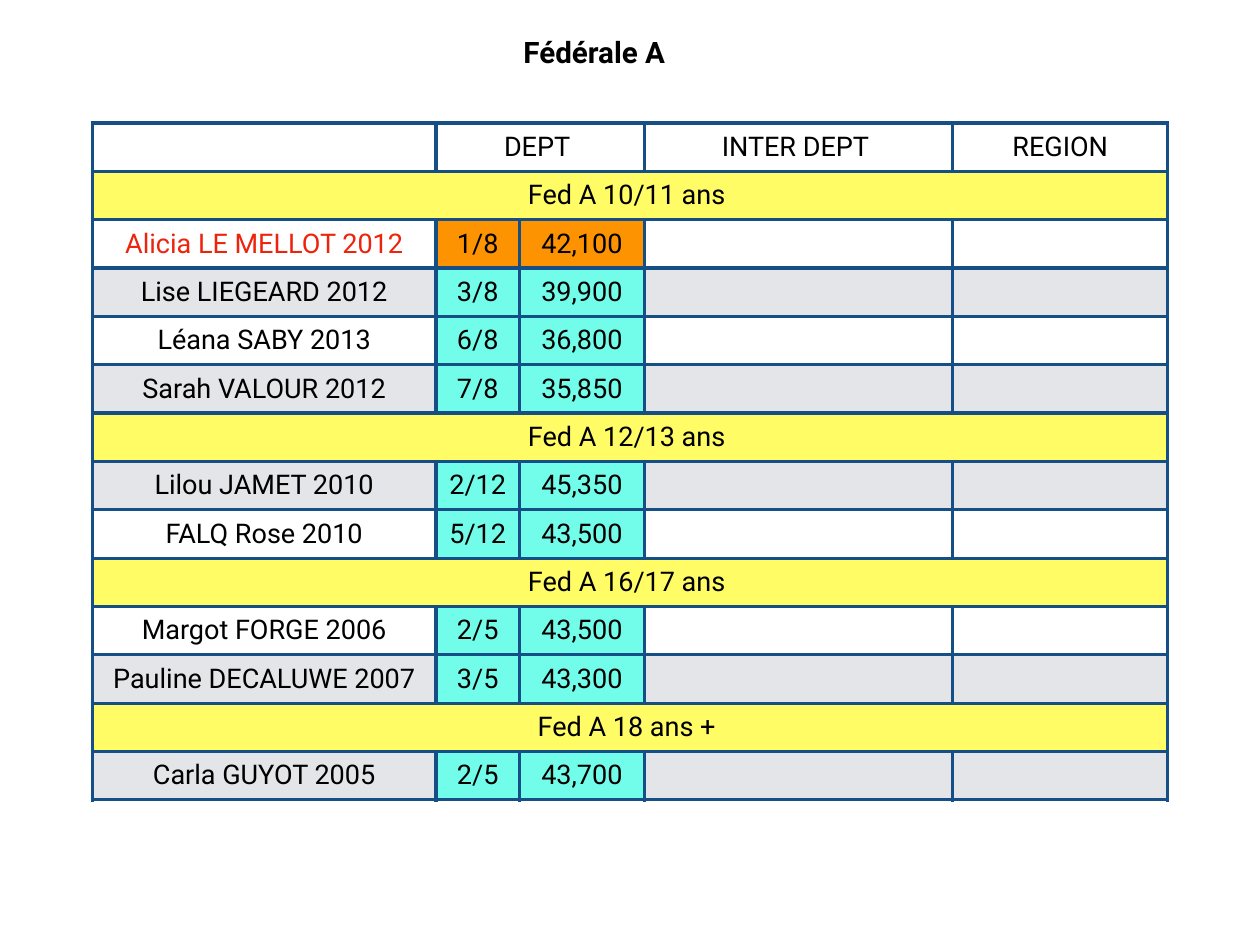
"""Build the Fédérale A results slide."""
import pptx
import pptx.chart
import pptx.dml.color
import pptx.enum.text
import pptx.oxml
import pptx.oxml.ns
import pptx.util
import lxml.etree

Pt = pptx.util.Pt
CENTER = pptx.enum.text.PP_ALIGN.CENTER
MIDDLE = pptx.enum.text.MSO_ANCHOR.MIDDLE
BLACK, WHITE, GRAY, RED = "000000", "FFFFFF", "E3E5E8", "EE230C"
YELLOW, ORANGE, AQUA, BLUE = "FFFC66", "FE9301", "72FDEA", "164F86"


def color(code):
    return pptx.dml.color.RGBColor.from_string(code)


def style(item, size, ink):
    frame = item.text_frame
    item.margin_left = item.margin_right = Pt(4)
    item.margin_top = item.margin_bottom = Pt(4)
    item.vertical_anchor = MIDDLE
    para = frame.paragraphs[0]
    para.alignment = CENTER
    para.font.size = Pt(size)
    para.font.name = "Roboto"
    para.font.color.rgb = color(ink)


rows = [
    ("", "DEPT ", "", "INTER DEPT ", "REGION"),
    ("Fed A 10/11 ans ",),
    ("Alicia LE MELLOT 2012", "1/8", "42,100"),
    ("Lise LIEGEARD 2012", "3/8", "39,900"),
    ("Léana SABY 2013", "6/8", "36,800"),
    ("Sarah VALOUR 2012", "7/8", "35,850"),
    ("Fed A 12/13 ans ",),
    ("Lilou JAMET 2010", "2/12", "45,350"),
    ("FALQ Rose 2010", "5/12", "43,500"),
    ("Fed A 16/17 ans ",),
    ("Margot FORGE 2006", "2/5", "43,500"),
    ("Pauline DECALUWE 2007", "3/5", "43,300"),
    ("Fed A 18 ans + ",),
    ("Carla GUYOT 2005", "2/5", "43,700"),
]
widths = [279.4, 67.7, 101.6, 250.6, 174.7]
height = 39.3

deck = pptx.Presentation()
deck.slide_width, deck.slide_height = Pt(1024), Pt(768)
slide = deck.slides.add_slide(deck.slide_layouts[5])

title = slide.shapes.title
title.left, title.top, title.width, title.height = Pt(417), Pt(24), Pt(132), Pt(36)
title.text_frame.text = "Fédérale A"
frame = title.text_frame
frame.word_wrap = False
frame.margin_left = frame.margin_right = Pt(4)
frame.margin_top = frame.margin_bottom = Pt(4)
frame.vertical_anchor = MIDDLE
head = frame.paragraphs[0]
head.alignment = CENTER
head.font.size, head.font.name, head.font.bold = Pt(24), "Roboto", True
head.font.color.rgb = color(BLACK)

holder = slide.shapes.add_table(
    len(rows), len(widths), Pt(75), Pt(100), Pt(sum(widths)), Pt(height * len(rows)))
table = holder.table
table.first_row = table.horz_banding = False
for col, width in zip(table.columns, widths):
    col.width = Pt(width)

for r, texts in enumerate(rows):
    table.rows[r].height = Pt(height)
    band = len(texts) == 1
    winner = texts[1:2] == ("1/8",)
    for c in range(len(widths)):
        cell = table.cell(r, c)
        cell.text = texts[c] if c < len(texts) else ""
        style(cell, 22, RED if winner and c == 0 else BLACK)
        if band:
            fill = YELLOW
        elif r and c in (1, 2):
            fill = ORANGE if winner else AQUA
        else:
            fill = GRAY if r % 2 else WHITE
        props = cell._tc.get_or_add_tcPr()
        for side in ("lnL", "lnR", "lnT", "lnB"):
            line = lxml.etree.SubElement(props, pptx.oxml.ns.qn("a:" + side), w=str(Pt(3)))
            paint = lxml.etree.SubElement(line, pptx.oxml.ns.qn("a:solidFill"))
            lxml.etree.SubElement(paint, pptx.oxml.ns.qn("a:srgbClr"), val=BLUE)
        cell.fill.solid()
        cell.fill.fore_color.rgb = color(fill)
    if band:
        table.cell(r, 0).merge(table.cell(r, 4))
table.cell(0, 1).merge(table.cell(0, 2))

deck.save("out.pptx")
